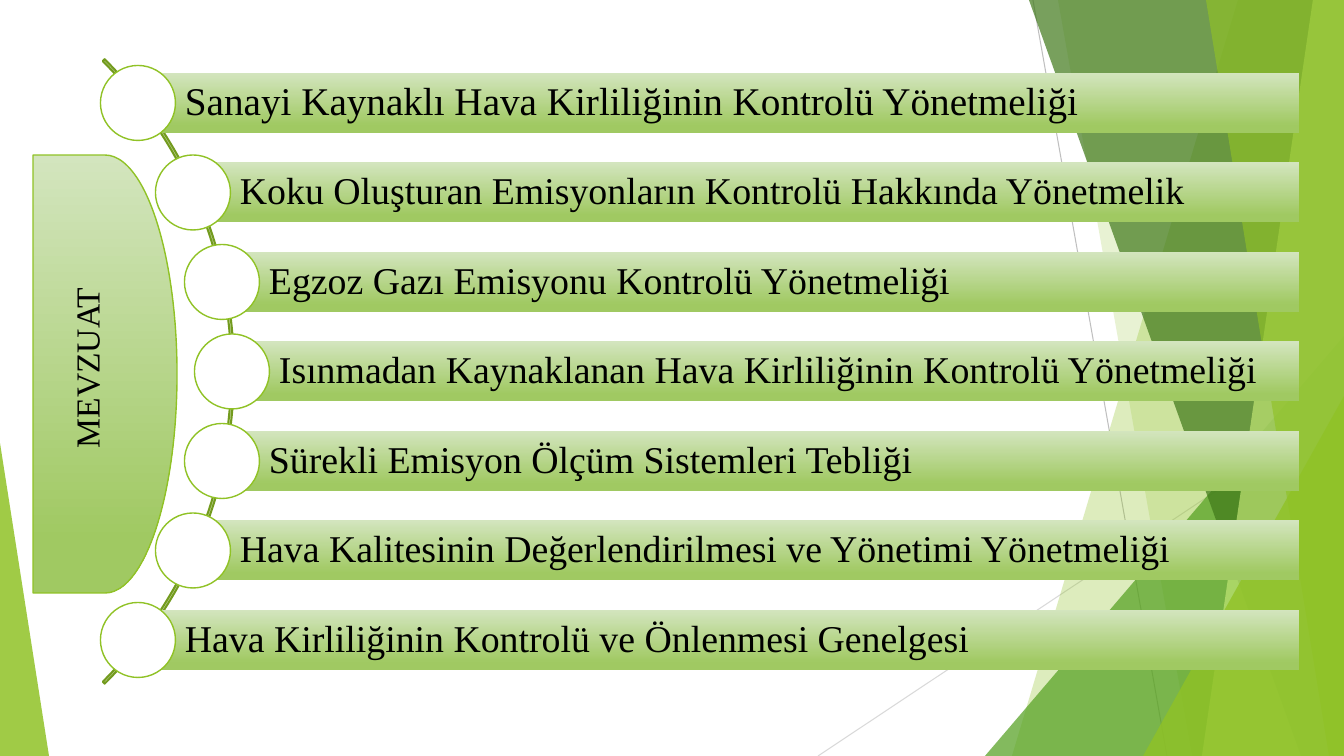
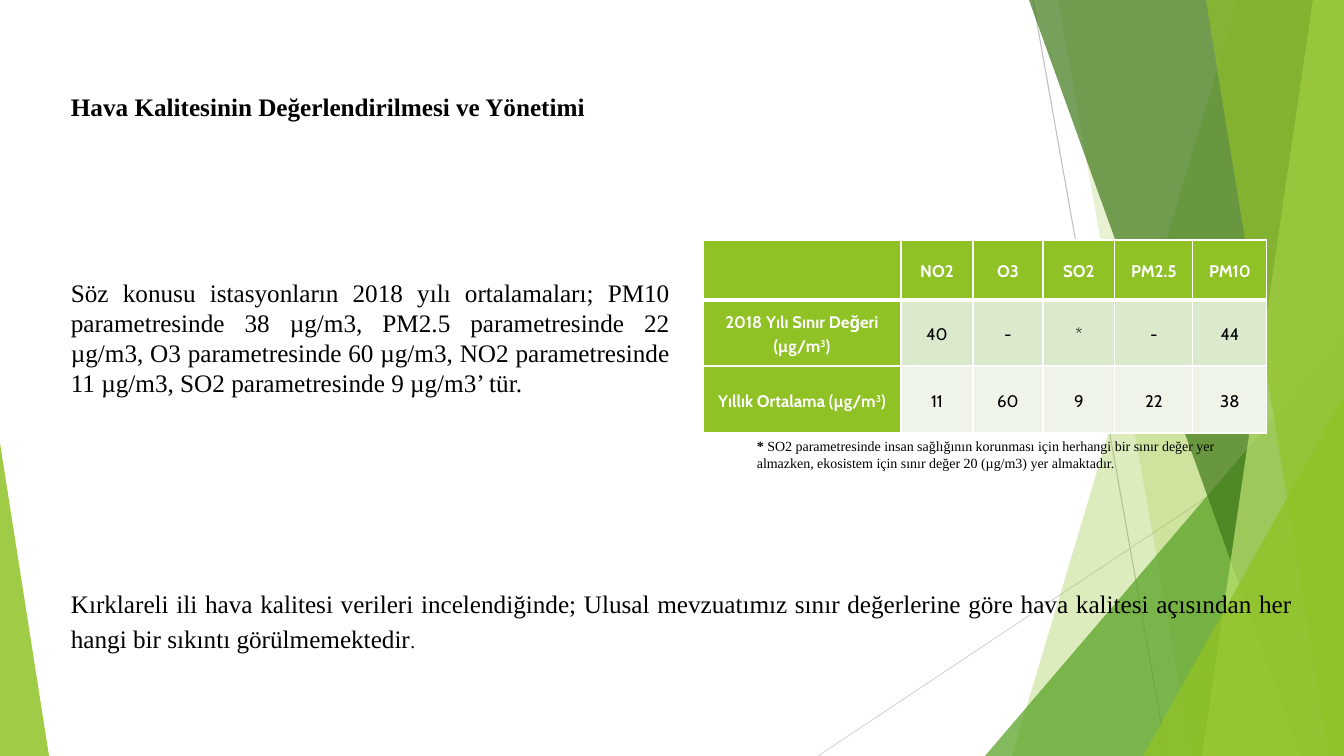
"""Build two slides on air quality legislation and yearly measurements."""
import math
from dataclasses import dataclass

import pptx
import pptx.dml.color
import pptx.enum.shapes
import pptx.enum.text
import pptx.oxml.ns
import pptx.util
from lxml import etree

SHAPE = pptx.enum.shapes.MSO_SHAPE
ALIGN = pptx.enum.text.PP_ALIGN
ANCHOR = pptx.enum.text.MSO_ANCHOR
qn = pptx.oxml.ns.qn
WIDTH, HEIGHT = 1344, 756
EMU_PER_PX = 12192000 / WIDTH


@dataclass(frozen=True)
class Theme:
    """Colours, fonts and type sizes."""
    green: str = "90C226"
    leaf: str = "54A021"
    forest: str = "3F7819"
    lime: str = "C0E474"
    arc: str = "739B1E"
    grad_top: str = "D3E5BE"
    grad_bottom: str = "A0C962"
    row_dark: str = "DBE9CD"
    row_light: str = "EEF4E8"
    line_dark: str = "BFBFBF"
    line_light: str = "D9D9D9"
    white: str = "FFFFFF"
    black: str = "000000"
    font: str = "Times New Roman"
    table_font: str = "Cabin"
    lead: int = 28
    item: int = 27
    label: int = 24
    body: int = 18
    stop: int = 14
    cell: int = 12
    note: int = 10


T = Theme()

BACK_LINES = [((1033, 0), (1167, HEIGHT), T.line_dark),
              ((WIDTH, 406), (818, HEIGHT), T.line_light)]
FACETS = [
    ("band", (1238, 1012), T.green, 30),
    ("band", (1058, 1192), T.green, 20),
    ("triangle", (985, 336, 359, 420, 1), T.leaf, 72),
    ("band", (1029, 1301), T.forest, 70),
    ("band", (1313, 1202), T.lime, 70),
    ("band", (1206, 1329), T.green, 65),
    ("triangle", (1143, 396, 201, 360, 1), T.green, 80),
    ("triangle", (0, 443, 49, 313, 0), T.green, 85),
]

REGULATIONS = [
    "Sanayi Kaynaklı Hava Kirliliğinin Kontrolü Yönetmeliği",
    "Koku Oluşturan Emisyonların Kontrolü Hakkında Yönetmelik",
    "Egzoz Gazı Emisyonu Kontrolü Yönetmeliği",
    "Isınmadan Kaynaklanan Hava Kirliliğinin Kontrolü Yönetmeliği",
    "Sürekli Emisyon Ölçüm Sistemleri Tebliği",
    "Hava Kalitesinin Değerlendirilmesi ve Yönetimi Yönetmeliği",
    "Hava Kirliliğinin Kontrolü ve Önlenmesi Genelgesi",
]
BULB_X = (232, 222, 193, 138)
FIRST_Y, LAST_Y, BAR_H, BULB, BAR_RIGHT = 103, 640, 60, 75, 1299

HEADING = "Hava Kalitesinin Değerlendirilmesi ve Yönetimi"
AVERAGES = ("Söz konusu istasyonların 2018 yılı ortalamaları; PM10 parametresinde 38 µg/m3, "
            "PM2.5 parametresinde 22 µg/m3, O3 parametresinde 60 µg/m3, NO2 parametresinde "
            "11 µg/m3, SO2 parametresinde 9 µg/m3’ tür.")
NOTE = ("SO2 parametresinde insan sağlığının korunması için herhangi bir sınır değer yer "
        "almazken, ekosistem için sınır değer 20 (µg/m3) yer almaktadır.")
CONCLUSION = ("Kırklareli ili hava kalitesi verileri incelendiğinde; Ulusal mevzuatımız sınır "
              "değerlerine göre hava kalitesi açısından her hangi bir sıkıntı görülmemektedir")

SUPERSCRIPT = "|"
MEASUREMENTS = [
    ("", "NO2", "O3", "SO2", "PM2.5", "PM10"),
    ("2018 Yılı Sınır Değeri (µg/m|3|)", "40", "-", "*", "-", "44"),
    ("Yıllık Ortalama (µg/m|3|)", "11", "60", "9", "22", "38"),
]
COLUMNS = (198, 72, 70, 72, 78, 74)
ROWS = (60, 66, 67)
ROW_FILLS = (T.green, T.row_dark, T.row_light)


def px(value):
    return pptx.util.Emu(round(value * EMU_PER_PX))


def emu(*values):
    return [px(v) for v in values]


def rgb(color):
    return pptx.dml.color.RGBColor.from_string(color)


def paint(sp, fill=None, alpha=None, line=None, width=1):
    sp.shadow.inherit = False
    if fill:
        sp.fill.solid()
        sp.fill.fore_color.rgb = rgb(fill)
    else:
        sp.fill.background()
    if alpha is not None:
        color = sp.element.spPr.find(".//" + qn("a:srgbClr"))
        etree.SubElement(color, qn("a:alpha"), val=str(alpha * 1000))
    if line:
        sp.line.color.rgb = rgb(line)
        sp.line.width = pptx.util.Pt(width)
    else:
        sp.line.fill.background()


def paint_gradient(sp, line=None):
    paint(sp, line=line)
    sp.fill.gradient()
    sp.fill.gradient_angle = 270
    looks = ((0, T.grad_top), (0.88, T.grad_bottom))
    for stop, (position, color) in zip(sp.fill.gradient_stops, looks):
        stop.position = position
        stop.color.rgb = rgb(color)


def add_run(p, text, size, bold=False, color=T.black, font=T.font):
    r = p.add_run()
    r.text = text
    r.font.size = pptx.util.Pt(size)
    r.font.bold = bold
    r.font.name = font
    r.font.color.rgb = rgb(color)
    return r


def add_text(slide, box, runs, align=ALIGN.LEFT):
    sp = slide.shapes.add_textbox(*emu(*box))
    sp.text_frame.word_wrap = True
    p = sp.text_frame.paragraphs[0]
    p.alignment = align
    for run in runs:
        add_run(p, *run)
    return sp


def draw_background(slide, layout):
    """Draw the facets as one group and hand it to the layout."""
    group = slide.shapes.add_group_shape()
    for start, end, color in BACK_LINES:
        c = group.shapes.add_connector(pptx.enum.shapes.MSO_CONNECTOR.STRAIGHT,
                                       *emu(*start, *end))
        c.line.color.rgb = rgb(color)
        c.line.width = pptx.util.Pt(0.75)
        etree.SubElement(c.element.spPr, qn("a:effectLst"))
    for kind, place, color, alpha in FACETS:
        if kind == "band":
            top, bottom = place
            outline = group.shapes.build_freeform(*emu(top, 0), scale=1.0)
            corners = ((WIDTH, 0), (WIDTH, HEIGHT), (bottom, HEIGHT))
            outline.add_line_segments([emu(*corner) for corner in corners], close=True)
            sp = outline.convert_to_shape()
        else:
            sp = group.shapes.add_shape(SHAPE.ISOSCELES_TRIANGLE, *emu(*place[:4]))
            sp.adjustments[0] = place[4]
        paint(sp, color, alpha)
    for placeholder in list(layout.placeholders):
        layout.shapes.element.remove(placeholder.element)
    layout.shapes.element.append(group.element)


def add_regulation(slide, i, text):
    middle = len(REGULATIONS) // 2
    x = BULB_X[abs(i - middle)]
    y = FIRST_Y + (LAST_Y - FIRST_Y) * i / (len(REGULATIONS) - 1)
    bar = slide.shapes.add_shape(
        SHAPE.RECTANGLE, *emu(x, y - BAR_H / 2, BAR_RIGHT - x, BAR_H))
    paint_gradient(bar)
    tf = bar.text_frame
    tf.word_wrap = True
    tf.vertical_anchor = ANCHOR.MIDDLE
    tf.margin_left, tf.margin_top, tf.margin_right, tf.margin_bottom = emu(47, 7, 7, 7)
    p = tf.paragraphs[0]
    p.alignment = ALIGN.LEFT
    p.line_spacing = 0.9
    add_run(p, text, T.item if i else T.lead)
    bulb = slide.shapes.add_shape(
        SHAPE.OVAL, *emu(x - BULB / 2, y - BULB / 2, BULB, BULB))
    paint(bulb, T.white, line=T.green)


def build_legislation(slide):
    arc = slide.shapes.add_shape(SHAPE.BLOCK_ARC, *emu(-649, -70, 883, 883))
    for i, value in enumerate((189, 27, 0.003)):
        arc.adjustments[i] = value
    paint(arc, line=T.arc, width=1.5)
    for i, text in enumerate(REGULATIONS):
        add_regulation(slide, i, text)
    hub = slide.shapes.add_shape(SHAPE.FLOWCHART_DELAY, *emu(33, 155, 144, 438))
    paint_gradient(hub, T.green)
    label = add_text(slide, (-41, 343, 254, 50), [("MEVZUAT", T.label)], ALIGN.CENTER)
    label.rotation = 270


def set_borders(cell, widths):
    tcPr = cell._tc.get_or_add_tcPr()
    for side, width in zip("LRTB", widths):
        ln = etree.SubElement(tcPr, qn("a:ln" + side), w=str(pptx.util.Pt(width)))
        fill = etree.SubElement(ln, qn("a:solidFill"))
        etree.SubElement(fill, qn("a:srgbClr"), val=T.white)


def fill_cell(cell, row, column, text):
    set_borders(cell, (1, 1, 3 if row == 1 else 1, 3 if row == 0 else 1))
    header = row == 0 or column == 0
    cell.fill.solid()
    cell.fill.fore_color.rgb = rgb(T.green if header else ROW_FILLS[row])
    cell.vertical_anchor = ANCHOR.MIDDLE
    cell.margin_left, cell.margin_top, cell.margin_right, cell.margin_bottom = emu(7, 0, 7, 0)
    p = cell.text_frame.paragraphs[0]
    p.alignment = ALIGN.CENTER
    p.line_spacing = 1.15
    for i, part in enumerate(text.split(SUPERSCRIPT)):
        r = add_run(p, part, T.cell, header, T.white if header else T.black, T.table_font)
        if i % 2:
            r._r.get_or_add_rPr().set("baseline", "30000")


def add_measurements(slide):
    frame = slide.shapes.add_table(len(ROWS), len(COLUMNS),
                                   *emu(703, 240, sum(COLUMNS), sum(ROWS)))
    table = frame.table
    table.first_row = table.horz_banding = False
    for column, width in zip(table.columns, COLUMNS):
        column.width = px(width)
    for row, height in zip(table.rows, ROWS):
        row.height = px(height)
    for i, texts in enumerate(MEASUREMENTS):
        for j, text in enumerate(texts):
            fill_cell(table.cell(i, j), i, j, text)


def build_assessment(slide):
    averages = add_text(slide, (61, 272, 619, 212), [(AVERAGES, T.body)], ALIGN.JUSTIFY)
    averages.text_frame.paragraphs[0].space_before = pptx.util.Pt(10)
    add_text(slide, (61, 86, 1149, 40), [(HEADING, T.body, True)], ALIGN.JUSTIFY)
    add_measurements(slide)
    add_text(slide, (747, 433, 519, 44), [("* ", T.note, True), (NOTE, T.note)])
    conclusion = add_text(slide, (61, 579, 1242, 81),
                          [(CONCLUSION, T.body), (".", T.stop)], ALIGN.JUSTIFY)
    p = conclusion.text_frame.paragraphs[0]
    p.line_spacing = 1.15
    p.space_after = pptx.util.Pt(10)


def main():
    prs = pptx.Presentation()
    prs.slide_width, prs.slide_height = emu(WIDTH, HEIGHT)
    layout = prs.slide_layouts[6]
    legislation, assessment = (prs.slides.add_slide(layout) for _ in range(2))
    draw_background(legislation, layout)
    build_legislation(legislation)
    build_assessment(assessment)
    prs.save("out.pptx")


if __name__ == "__main__":
    main()
